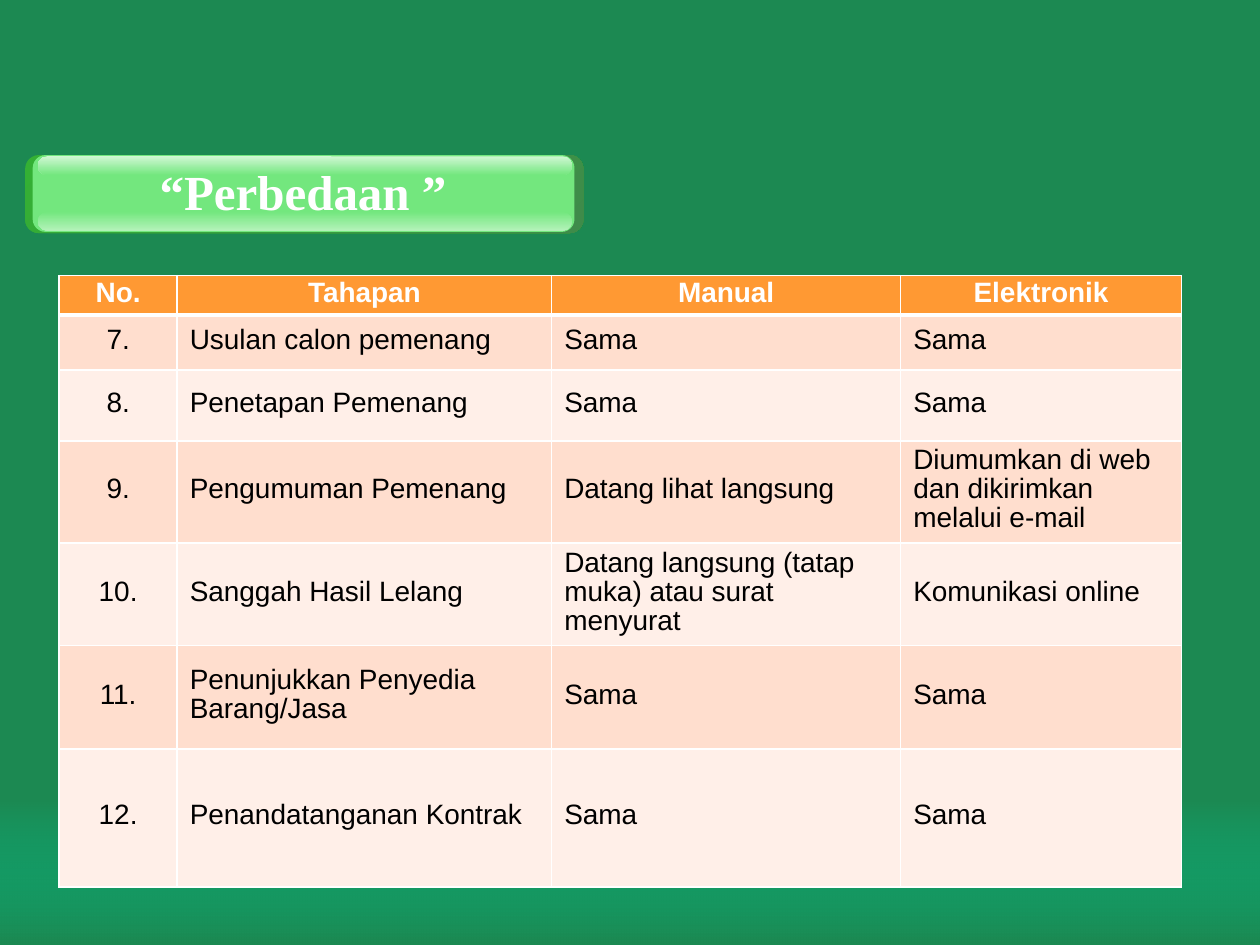
from lxml import etree
from pptx import Presentation
from pptx.dml.color import RGBColor
from pptx.enum.shapes import MSO_SHAPE
from pptx.enum.text import MSO_ANCHOR, MSO_AUTO_SIZE, PP_ALIGN
from pptx.oxml.ns import qn
from pptx.util import Pt

RECT, ROUND = MSO_SHAPE.RECTANGLE, MSO_SHAPE.ROUNDED_RECTANGLE
LEFT, CENTER = PP_ALIGN.LEFT, PP_ALIGN.CENTER
MIDDLE = MSO_ANCHOR.MIDDLE
GROW = MSO_AUTO_SIZE.SHAPE_TO_FIT_TEXT

COLORS = {
    "back": "1C8952", "glow": "00CC99", "white": "FFFFFF", "black": "000000",
    "header": "FF9933", "band_dark": "FFDECE", "band_light": "FFEFE8",
    "edge_left": "34B034", "edge_right": "3F8B4A", "button": "73E77E",
    "shine_top": "D0F7D4", "shine_bottom": "B3F2B9",
}

COL_WIDTHS = [67.5, 214, 199.5, 160.5]
ROW_HEIGHTS = [22.5, 31.5, 40.5, 58.5, 58.5, 59, 79]
ROWS = [
    ["No.", "Tahapan", "Manual", "Elektronik"],
    ["7.", "Usulan calon pemenang", "Sama", "Sama"],
    ["8.", "Penetapan Pemenang", "Sama", "Sama"],
    ["9.", "Pengumuman Pemenang", "Datang lihat langsung",
     "Diumumkan di web dan dikirimkan melalui e-mail"],
    ["10.", "Sanggah Hasil Lelang",
     "Datang langsung (tatap muka) atau surat menyurat", "Komunikasi online"],
    ["11.", "Penunjukkan Penyedia Barang/Jasa", "Sama", "Sama"],
    ["12.", "Penandatanganan Kontrak", "Sama", "Sama"],
]


def rgb(name):
    return RGBColor.from_string(COLORS[name])


class SlideBuilder:
    body_font, title_font = "Arial", "Times New Roman"
    body_size, title_size = 16, 28

    def __init__(self, slide):
        self.s = slide

    def background(self, color):
        fill = self.s.background.fill
        fill.solid()
        fill.fore_color.rgb = rgb(color)

    def group(self):
        return self.s.shapes.add_group_shape().shapes

    def shape(self, shapes, kind, box, colors, angle=90, radius=None, fade=False):
        sp = shapes.add_shape(kind, *map(Pt, box))
        sp.shadow.inherit = False
        sp.line.fill.background()
        if radius is not None:
            sp.adjustments[0] = radius
        if len(colors) == 1:
            sp.fill.solid()
            sp.fill.fore_color.rgb = rgb(colors[0])
            return
        sp.fill.gradient()
        sp.fill.gradient_angle = 360 - angle
        for stop, color, position in zip(sp.fill.gradient_stops, colors, (0, 1)):
            stop.color.rgb = rgb(color)
            stop.position = position
        if fade:
            first = next(sp._element.iter(qn("a:srgbClr")))
            etree.SubElement(first, qn("a:alpha"), val="0")

    def style_run(self, p, font, size, color, bold):
        r = p.runs[0]
        r.font.name, r.font.size, r.font.bold = font, Pt(size), bold
        r.font.color.rgb = rgb(color)

    def title(self, shapes, box, text):
        tf = shapes.add_textbox(*map(Pt, box)).text_frame
        tf.word_wrap = True
        tf.auto_size = GROW
        tf.text = text
        p = tf.paragraphs[0]
        p.alignment = CENTER
        self.style_run(p, self.title_font, self.title_size, "white", True)

    def borders(self, cell, top, bottom):
        tc_pr = cell._tc.get_or_add_tcPr()
        for side, width in (("L", 1), ("R", 1), ("T", top), ("B", bottom)):
            ln = etree.SubElement(tc_pr, qn("a:ln" + side), w=str(Pt(width)))
            fill = etree.SubElement(ln, qn("a:solidFill"))
            etree.SubElement(fill, qn("a:srgbClr"), val=COLORS["white"])

    def cell(self, cell, text, row, col):
        header = row == 0
        self.borders(cell, 3 if row == 1 else 1, 3 if header else 1)
        cell.fill.solid()
        band = "band_dark" if row % 2 else "band_light"
        cell.fill.fore_color.rgb = rgb("header" if header else band)
        cell.vertical_anchor = MIDDLE
        cell.margin_left = cell.margin_right = Pt(7.2)
        cell.margin_top, cell.margin_bottom = Pt(1.5), Pt(3.6)
        cell.text_frame.text = text
        p = cell.text_frame.paragraphs[0]
        p.alignment = CENTER if header or col == 0 else LEFT
        p.line_spacing = 0.93
        self.style_run(p, self.body_font, self.body_size,
                       "white" if header else "black", header)

    def table(self, left, top, widths, heights, rows):
        table = self.s.shapes.add_table(
            len(rows), len(widths), Pt(left), Pt(top),
            Pt(sum(widths)), Pt(sum(heights))).table
        table.horz_banding = False
        for column, width in zip(table.columns, widths):
            column.width = Pt(width)
        for i, (height, texts) in enumerate(zip(heights, rows)):
            table.rows[i].height = Pt(height)
            for j, text in enumerate(texts):
                self.cell(table.cell(i, j), text, i, j)


def main():
    prs = Presentation()
    prs.slide_width, prs.slide_height = Pt(720), Pt(540)
    b = SlideBuilder(prs.slides.add_slide(prs.slide_layouts[6]))
    b.background("back")
    b.shape(b.s.shapes, RECT, (0, 457.2, 720, 82.8), ["glow", "back"], fade=True)
    b.table(33.75, 157.5, COL_WIDTHS, ROW_HEIGHTS, ROWS)

    button = b.group()
    b.shape(button, ROUND, (14.4, 88.6, 319, 44.6), ["edge_left", "edge_right"],
            angle=45, radius=0.175)
    b.shape(button, ROUND, (18.7, 88.6, 309.6, 43.9), ["button"], radius=0.167)
    for top, colors in ((121, ["button", "shine_bottom"]),
                        (89.3, ["shine_top", "button"])):
        b.shape(button, ROUND, (21.6, top, 305.3, 10.8), colors, radius=0.5)
    b.title(button, (21.6, 88.6, 303.1, 41), "“Perbedaan ”")
    prs.save("out.pptx")


if __name__ == "__main__":
    main()
